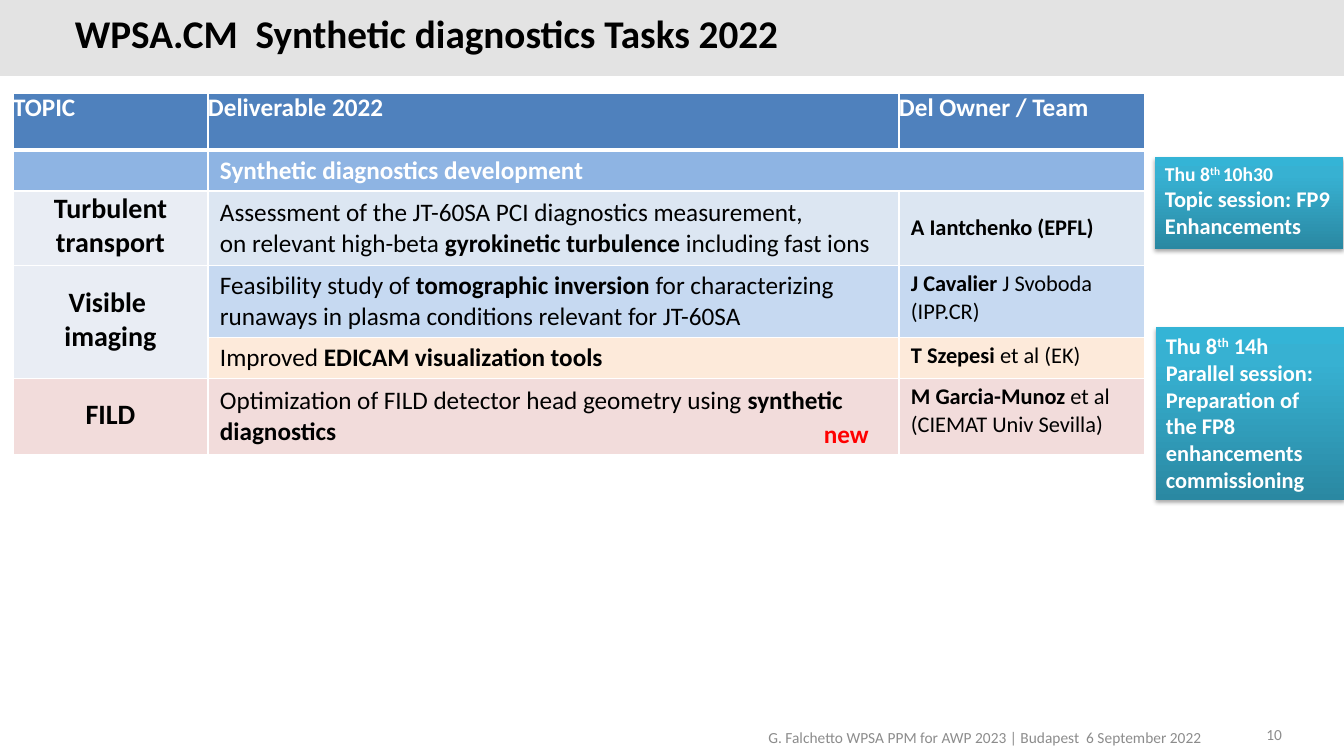
"""Build the slide listing the synthetic diagnostics tasks for 2022."""
from lxml.etree import SubElement
from pptx import Presentation
from pptx.dml.color import RGBColor
from pptx.enum.shapes import MSO_SHAPE
from pptx.enum.text import MSO_ANCHOR, PP_ALIGN
from pptx.oxml import parse_xml
from pptx.oxml.ns import nsdecls, qn
from pptx.util import Pt

EMU_PER_PX = 914400 / 100.8
FONT = "Calibri"
WHITE = RGBColor(0xFF, 0xFF, 0xFF)
BLACK = RGBColor(0x00, 0x00, 0x00)
RED = RGBColor(0xFF, 0x00, 0x00)
GREY = RGBColor(0x8C, 0x8C, 0x8C)
BAND = RGBColor(0xE3, 0xE3, 0xE3)
HEADER = RGBColor(0x4F, 0x81, 0xBD)
SECTION = RGBColor(0x8E, 0xB4, 0xE3)
TOPIC = RGBColor(0xE9, 0xED, 0xF4)
PALE_BLUE = RGBColor(0xDC, 0xE6, 0xF2)
SKY = RGBColor(0xC6, 0xD9, 0xF1)
PEACH = RGBColor(0xFD, 0xEA, 0xDA)
ROSE = RGBColor(0xF2, 0xDC, 0xDB)
TEAL_STOPS = [
    (0, RGBColor(0x2A, 0x88, 0xA2)),
    (80, RGBColor(0x37, 0xB1, 0xD2)),
    (100, RGBColor(0x34, 0xB4, 0xD6)),
]
TOP, MIDDLE = MSO_ANCHOR.TOP, MSO_ANCHOR.MIDDLE
LEFT, CENTER, RIGHT = PP_ALIGN.LEFT, PP_ALIGN.CENTER, PP_ALIGN.RIGHT

TITLE = "WPSA.CM  Synthetic diagnostics Tasks 2022"
FOOTER = "G. Falchetto WPSA PPM for AWP 2023 | Budapest  6 September 2022"
PAGE_NUMBER = "10"
NEW_TAG = "new"

HEADINGS = ["TOPIC", "Deliverable 2022", "Del Owner / Team"]
SECTION_TITLE = "Synthetic diagnostics development"
TASKS = [
    {
        "topic": [[("Turbulent transport", "b")]],
        "deliverable": [
            [("Assessment of the JT-60SA PCI diagnostics measurement,", "")],
            [("on relevant high-beta ", ""), ("gyrokinetic turbulence ", "b"),
             ("including fast ions", "")],
        ],
        "owner": [[("A Iantchenko (EPFL)", "b")]],
        "fills": (TOPIC, PALE_BLUE), "owner_anchor": MIDDLE,
    },
    {
        "topic": [[("Visible ", "b")], [("imaging", "b")]],
        "deliverable": [
            [("Feasibility study of ", ""), ("tomographic inversion ", "b"),
             ("for characterizing runaways in plasma conditions relevant for JT-60SA", "")],
        ],
        "owner": [[("J Cavalier ", "b"), ("J Svoboda", "")], [("(IPP.CR)", "")]],
        "fills": (TOPIC, SKY), "owner_anchor": TOP,
    },
    {
        "topic": None,
        "deliverable": [[("Improved ", ""), ("EDICAM visualization tools", "b")]],
        "owner": [[("T Szepesi ", "b"), ("et al (EK)", "")]],
        "fills": (TOPIC, PEACH), "owner_anchor": TOP,
    },
    {
        "topic": [[("FILD", "b")]],
        "deliverable": [
            [("Optimization of FILD detector head geometry using ", ""),
             ("synthetic diagnostics", "b")],
        ],
        "owner": [[("M Garcia-Munoz ", "b"), ("et al", "")], [("(CIEMAT Univ Sevilla)", "")]],
        "fills": (ROSE, ROSE), "owner_anchor": TOP,
    },
]
SESSIONS = [
    ((1156, 327, 188, 173), [
        (16, [("Thu 8", "b"), ("th", "b^"),
              (" 14h Parallel session: Preparation of the FP8 enhancements commissioning", "b")]),
    ]),
    ((1155, 157, 188, 92), [
        (14, [("Thu 8", "b"), ("th ", "b^"), ("10h30", "b")]),
        (16, [("Topic session: FP9 Enhancements", "b")]),
    ]),
]

TABLE_LEFT, TABLE_TOP = 13, 93
COLUMN_WIDTHS = [195, 691, 246]
ROW_HEIGHTS = [57, 41, 74, 72, 41, 76]
FLUSH = (0, 0, 0, 0)
TOPIC_INSETS = (1, 1, 1, 5)
BODY_INSETS = (12, 5, 12, 5)


def px(length):
    return round(length * EMU_PER_PX)


def write(frame, paragraphs, color, align=LEFT):
    """Fill a text frame from (size, runs) pairs."""
    for index, (size, runs) in enumerate(paragraphs):
        paragraph = frame.add_paragraph() if index else frame.paragraphs[0]
        paragraph.alignment = align
        for text, style in runs:
            run = paragraph.add_run()
            run.text = text
            run.font.name, run.font.size = FONT, Pt(size)
            run.font.bold = "b" in style
            run.font.color.rgb = color
            if "^" in style:
                run.font._element.set("baseline", "30000")


def add_label(slide, box, text, size, color, style="", align=LEFT, wrap=True):
    label = slide.shapes.add_textbox(*map(px, box)).text_frame
    label.word_wrap = wrap
    write(label, [(size, [(text, style)])], color, align)
    return label


def add_rectangle(slide, box):
    rectangle = slide.shapes.add_shape(MSO_SHAPE.RECTANGLE, *map(px, box))
    rectangle.shadow.inherit = False
    rectangle.line.fill.background()
    return rectangle


def add_session(slide, box, paragraphs):
    session = add_rectangle(slide, box)
    properties = session._element.spPr
    stops = "".join(f'<a:gs pos="{at * 1000}"><a:srgbClr val="{color}"/></a:gs>'
                    for at, color in TEAL_STOPS)
    properties.find(qn("a:prstGeom")).addnext(parse_xml(
        f'<a:gradFill {nsdecls("a")} rotWithShape="1"><a:gsLst>{stops}</a:gsLst>'
        '<a:lin ang="16200000" scaled="0"/></a:gradFill>'))
    properties.find(qn("a:effectLst")).append(parse_xml(
        f'<a:outerShdw {nsdecls("a")} blurRad="{Pt(3.1)}" dist="{Pt(1.8)}" dir="5400000" '
        'rotWithShape="0"><a:srgbClr val="000000"><a:alpha val="35000"/></a:srgbClr></a:outerShdw>'))
    session.text_frame.word_wrap = True
    session.text_frame.vertical_anchor = TOP
    write(session.text_frame, paragraphs, WHITE)


def style_cell(cell, fill, insets, anchor, top=1, bottom=1):
    cell.margin_left, cell.margin_top, cell.margin_right, cell.margin_bottom = map(px, insets)
    cell.vertical_anchor = anchor
    properties = cell._tc.get_or_add_tcPr()
    for side, width in (("L", 1), ("R", 1), ("T", top), ("B", bottom)):
        border = SubElement(properties, qn(f"a:ln{side}"), w=str(Pt(width)))
        SubElement(SubElement(border, qn("a:solidFill")), qn("a:srgbClr"), val=str(WHITE))
    cell.fill.solid()
    cell.fill.fore_color.rgb = fill


def add_tasks(slide):
    tasks = slide.shapes.add_table(
        len(ROW_HEIGHTS), len(COLUMN_WIDTHS), px(TABLE_LEFT), px(TABLE_TOP),
        px(sum(COLUMN_WIDTHS)), px(sum(ROW_HEIGHTS))).table
    tasks.first_row = tasks.horz_banding = False
    for column, width in zip(tasks.columns, COLUMN_WIDTHS):
        column.width = px(width)
    for row, height in zip(tasks.rows, ROW_HEIGHTS):
        row.height = px(height)
    for column, heading in enumerate(HEADINGS):
        cell = tasks.cell(0, column)
        style_cell(cell, HEADER, FLUSH, TOP, bottom=3)
        write(cell.text_frame, [(18, [(heading, "b")])], WHITE)
        style_cell(tasks.cell(1, column), SECTION, BODY_INSETS if column else FLUSH, MIDDLE, top=3)
    write(tasks.cell(1, 1).text_frame, [(18, [(SECTION_TITLE, "b")])], WHITE)
    tasks.cell(1, 1).merge(tasks.cell(1, 2))
    for row, task in enumerate(TASKS, start=2):
        topic_fill, fill = task["fills"]
        layout = [
            ("topic", 20, CENTER, topic_fill, TOPIC_INSETS, MIDDLE),
            ("deliverable", 18, LEFT, fill, BODY_INSETS, MIDDLE),
            ("owner", 16, LEFT, fill, BODY_INSETS, task["owner_anchor"]),
        ]
        for column, (part, size, align, color, insets, anchor) in enumerate(layout):
            cell = tasks.cell(row, column)
            style_cell(cell, color, insets, anchor)
            if task[part]:
                write(cell.text_frame, [(size, runs) for runs in task[part]], BLACK, align)
        if task["topic"] is None:
            tasks.cell(row - 1, 0).merge(tasks.cell(row, 0))


def main():
    deck = Presentation()
    deck.slide_width, deck.slide_height = px(1344), px(756)
    slide = deck.slides.add_slide(deck.slide_layouts[6])
    band = add_rectangle(slide, (0, 0, 1344, 76))
    band.fill.solid()
    band.fill.fore_color.rgb = BAND
    add_tasks(slide)
    add_label(slide, (647, 723, 565, 36), FOOTER, 11, GREY, align=RIGHT)
    add_label(slide, (1212, 720, 80, 22), PAGE_NUMBER, 11, GREY, align=RIGHT)
    add_label(slide, (814, 413, 66, 40), NEW_TAG, 18, RED, "b", wrap=False)
    title = add_label(slide, (65, 15, 929, 50), TITLE, 28, BLACK, "b")
    title.vertical_anchor = MIDDLE
    title.paragraphs[0].line_spacing = Pt(24)
    for box, paragraphs in SESSIONS:
        add_session(slide, box, paragraphs)
    deck.save("out.pptx")


if __name__ == "__main__":
    main()
